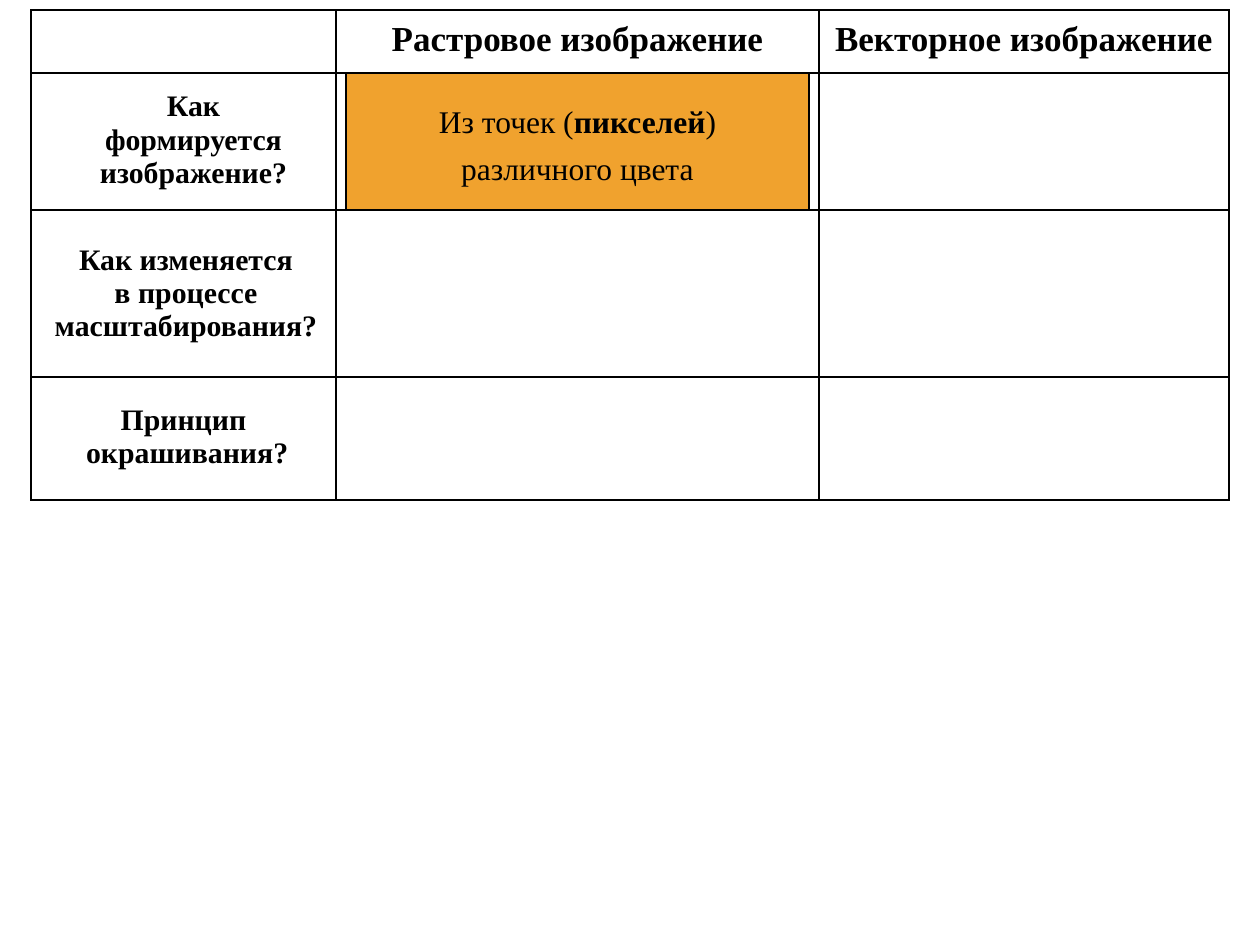
import dataclasses
import typing

import pptx
import pptx.dml.color
import pptx.enum.shapes
import pptx.enum.text
import pptx.oxml
import pptx.oxml.ns
import pptx.util

SCALE = 914400 / 126  # EMU per px


@dataclasses.dataclass(frozen=True)
class Theme:
    font: str = "Times New Roman"
    ink: str = "000000"
    accent: str = "F0A22E"
    head: int = 20
    label: int = 17
    body: int = 18
    border: float = 1
    edge: float = 0.75


@dataclasses.dataclass(frozen=True)
class Entry:
    row: int
    col: int
    lines: tuple[str, ...]
    size: int
    inset: tuple[int, int, int, int]  # left, top, right, bottom


THEME = Theme()
COLS = (305, 483, 410)
ROWS = (63, 137, 167, 123)
LEFT, TOP = 31, 10
GAP = 10  # between the answer box and the column lines

ENTRIES = (
    Entry(0, 1, ("Растровое изображение",), THEME.head, (3, 0, 3, 3)),
    Entry(0, 2, ("Векторное изображение",), THEME.head, (3, 0, 3, 3)),
    Entry(1, 0, ("Как", "формируется", "изображение?"), THEME.label, (25, 0, 5, 3)),
    Entry(2, 0, ("Как изменяется", "в процессе", "масштабирования?"),
          THEME.label, (10, 0, 5, 0)),
    Entry(3, 0, ("Принцип", " окрашивания?"), THEME.label, (5, 0, 5, 3)),
)


def px(count: int) -> pptx.util.Emu:
    return pptx.util.Emu(round(count * SCALE))


def tint(code: str) -> pptx.dml.color.RGBColor:
    return pptx.dml.color.RGBColor.from_string(code)


def write(frame: typing.Any, lines: typing.Sequence[typing.Sequence[tuple[str, bool]]],
          *, size: int, space: float = 0) -> None:
    """Each line is a paragraph of (text, bold) runs."""
    for index, line in enumerate(lines):
        para = frame.add_paragraph() if index else frame.paragraphs[0]
        para.alignment = pptx.enum.text.PP_ALIGN.CENTER
        if index and space:
            para.space_before = pptx.util.Pt(space)
        for text, bold in line:
            run = para.add_run()
            run.text = text
            run.font.name = THEME.font
            run.font.size = pptx.util.Pt(size)
            run.font.bold = bold
            run.font.color.rgb = tint(THEME.ink)


def pad(box: typing.Any, inset: tuple[int, int, int, int]) -> None:
    box.margin_left, box.margin_top, box.margin_right, box.margin_bottom = map(px, inset)
    box.vertical_anchor = pptx.enum.text.MSO_ANCHOR.MIDDLE


def frame_cell(cell: typing.Any) -> None:
    cell.fill.background()
    props = cell._tc.get_or_add_tcPr()
    width = pptx.util.Pt(THEME.border)
    for index, side in enumerate(("lnL", "lnR", "lnT", "lnB")):
        props.insert(index, pptx.oxml.parse_xml(
            f'<a:{side} {pptx.oxml.ns.nsdecls("a")} w="{width}"><a:solidFill>'
            f'<a:srgbClr val="{THEME.ink}"/></a:solidFill></a:{side}>'))


def draw_grid(slide: typing.Any) -> None:
    table = slide.shapes.add_table(
        len(ROWS), len(COLS), px(LEFT), px(TOP), px(sum(COLS)), px(sum(ROWS))).table
    table.first_row = table.horz_banding = False
    for col, width in zip(table.columns, COLS):
        col.width = px(width)
    for row, height in zip(table.rows, ROWS):
        row.height = px(height)
    for cell in table.iter_cells():
        frame_cell(cell)
    for entry in ENTRIES:
        cell = table.cell(entry.row, entry.col)
        pad(cell, entry.inset)
        write(cell.text_frame, [[(line, True)] for line in entry.lines], size=entry.size)


def draw_answer(slide: typing.Any) -> None:
    box = slide.shapes.add_shape(
        pptx.enum.shapes.MSO_SHAPE.RECTANGLE,
        px(LEFT + COLS[0] + GAP), px(TOP + ROWS[0]), px(COLS[1] - 2 * GAP), px(ROWS[1]))
    box.shadow.inherit = False
    box.fill.solid()
    box.fill.fore_color.rgb = tint(THEME.accent)
    box.line.color.rgb = tint(THEME.ink)
    box.line.width = pptx.util.Pt(THEME.edge)
    frame = box.text_frame
    frame.word_wrap = False
    pad(frame, (13, 12, 13, 6))
    write(frame, [
        [("Из точек (", False), ("пикселей", True), (")", False)],
        [("различного цвета", False)],
    ], size=THEME.body, space=5)


def main() -> None:
    deck = pptx.Presentation()
    deck.slide_width, deck.slide_height = px(1260), px(945)
    slide = deck.slides.add_slide(deck.slide_layouts[6])
    # Comparison table, then the filled-in answer over it
    draw_grid(slide)
    draw_answer(slide)
    deck.save("out.pptx")


if __name__ == "__main__":
    main()
